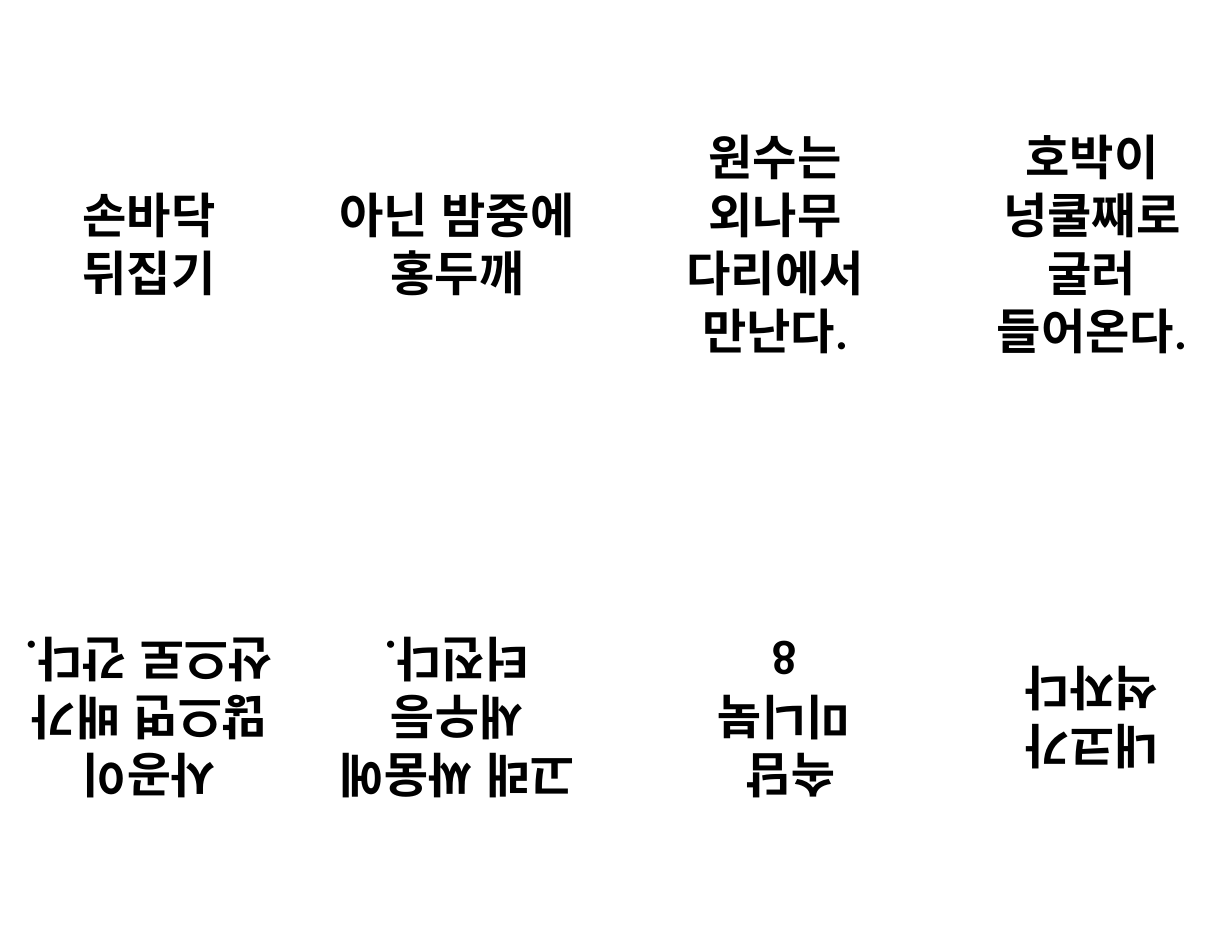
from pptx import Presentation
from pptx.dml.color import RGBColor
from pptx.enum.dml import MSO_LINE
from pptx.enum.lang import MSO_LANGUAGE_ID
from pptx.enum.shapes import MSO_SHAPE
from pptx.enum.text import MSO_ANCHOR, PP_ALIGN
from pptx.util import Inches, Pt

WHITE = RGBColor(255, 255, 255)
BLACK = RGBColor(0, 0, 0)
WIDTH, HEIGHT = 2.5, 4
COLUMNS = [0.08, 2.83, 5.67, 8.5]
TOP = [
    ["손바닥 뒤집기"],
    ["아닌 밤중에 홍두깨"],
    ["원수는 외나무 다리에서 만난다."],
    ["호박이 넝쿨째로 굴러 들어온다."],
]
BOTTOM = [
    ["사공이 많으면 배가 산으로 간다."],
    ["고래 싸움에 새우등 터진다."],
    ["속담 ", "미니북", "8"],
    ["내코가 석자다"],
]


def add_page(slide, left, top, turn, lines):
    page = slide.shapes.add_shape(
        MSO_SHAPE.RECTANGLE, Inches(left), Inches(top), Inches(WIDTH), Inches(HEIGHT)
    )
    page.rotation = turn
    page.shadow.inherit = False
    page.fill.solid()
    page.fill.fore_color.rgb = WHITE
    page.line.color.rgb = WHITE
    page.line.width = Pt(0.25)
    page.line.dash_style = MSO_LINE.DASH
    frame = page.text_frame
    frame.word_wrap = True
    frame.vertical_anchor = MSO_ANCHOR.MIDDLE
    frame.margin_left = frame.margin_right = Inches(0.11)
    frame.margin_top = frame.margin_bottom = Inches(0.06)
    for i, line in enumerate(lines):
        para = frame.add_paragraph() if i else frame.paragraphs[0]
        para.alignment = PP_ALIGN.CENTER
        run = para.add_run()
        run.text = line
        font = run.font
        font.name = "Calibri"
        font.size = Pt(31)
        font.bold = True
        font.color.rgb = BLACK
        font.language_id = MSO_LANGUAGE_ID.KOREAN


def add_row(slide, lefts, top, turn, texts):
    for left, lines in zip(lefts, texts):
        add_page(slide, left, top, turn, lines)


def main():
    deck = Presentation()
    deck.slide_width = Inches(11)
    deck.slide_height = Inches(8.5)
    slide = deck.slides.add_slide(deck.slide_layouts[6])
    add_row(slide, COLUMNS, 0.17, 0, TOP)
    add_row(slide, COLUMNS[:2] + [5.75] + COLUMNS[3:], 4.42, 180, BOTTOM)
    deck.save("out.pptx")


if __name__ == "__main__":
    main()
